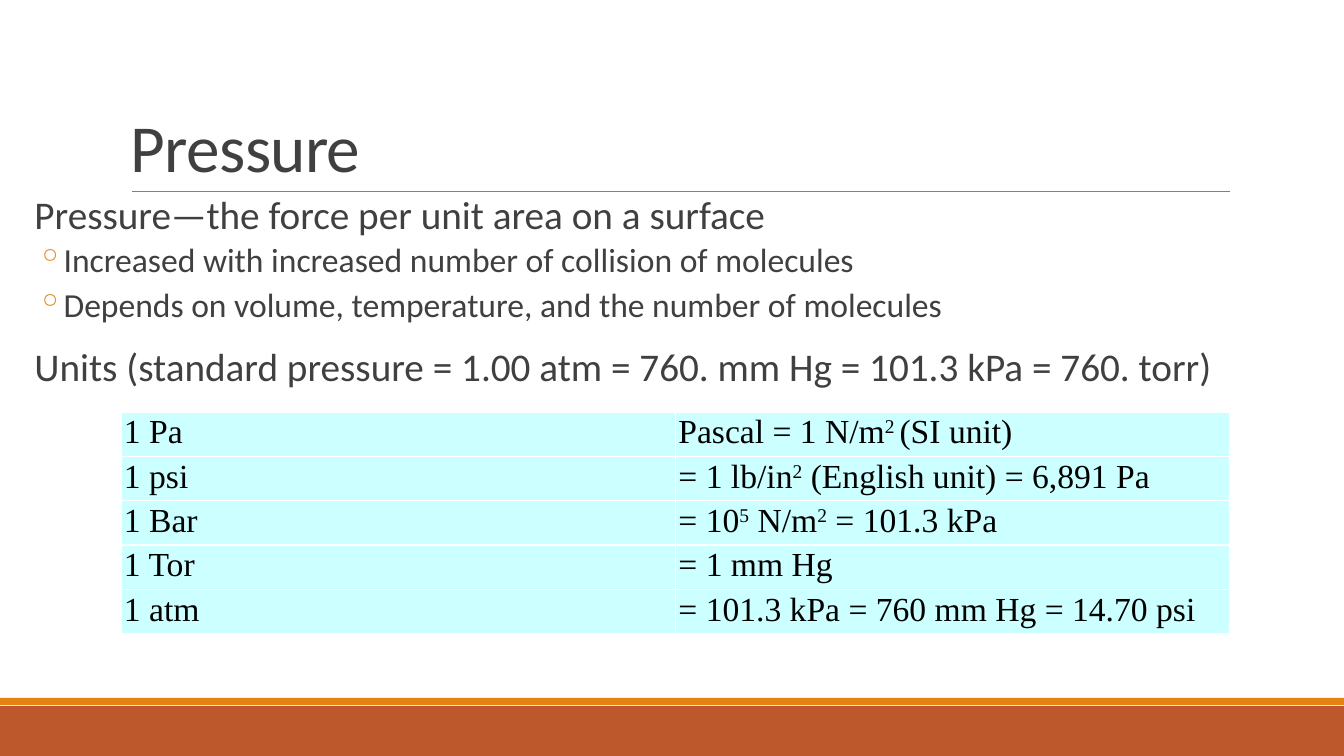
from lxml import etree
from pptx import Presentation
from pptx import util as u
from pptx.dml.color import RGBColor
from pptx.enum import shapes, text
from pptx.oxml.ns import qn

PX = 914400 / 100.8
COLOURS = {
    "band": "BD582C",
    "accent": "E48312",
    "rule": "808080",
    "text": "404040",
    "cell": "CCFFFF",
    "cell_text": "000000",
}


def px(length):
    return u.Emu(round(length * PX))


def colour(name):
    return RGBColor.from_string(COLOURS[name])


class SlideBuilder:
    def __init__(self, slide, font="Calibri", table_font="Times New Roman"):
        self.slide = slide
        self.font = font
        self.table_font = table_font

    def style(self, paragraph, size, font, tint):
        paragraph.font.size = u.Pt(size)
        paragraph.font.name = font
        paragraph.font.color.rgb = colour(tint)

    def band(self, top, height, fill):
        shape = self.slide.shapes.add_shape(
            shapes.MSO_SHAPE.RECTANGLE, 0, px(top), px(1344), px(height))
        shape.shadow.inherit = False
        shape.fill.solid()
        shape.fill.fore_color.rgb = colour(fill)
        shape.line.fill.background()

    def rule(self, left, right, y):
        line = self.slide.shapes.add_connector(
            shapes.MSO_CONNECTOR.STRAIGHT, px(left), px(y), px(right), px(y))
        line.line.color.rgb = colour("rule")
        line.line.width = u.Pt(0.5)
        etree.SubElement(line._element.spPr, qn("a:effectLst"))

    def text_frame(self, left, top, width, height):
        box = self.slide.shapes.add_textbox(px(left), px(top), px(width), px(height))
        box.text_frame.word_wrap = True
        return box.text_frame

    def title(self, wording, *place):
        frame = self.text_frame(*place)
        frame.vertical_anchor = text.MSO_ANCHOR.BOTTOM
        paragraph = frame.paragraphs[0]
        paragraph.line_spacing = 0.85
        self.style(paragraph, 48, self.font, "text")
        run = paragraph.add_run()
        run.text = wording
        run._r.get_or_add_rPr().set("spc", "-50")

    def outline(self, items, *place):
        frame = self.text_frame(*place)
        frame.margin_left = frame.margin_right = 0
        for index, (level, wording) in enumerate(items):
            paragraph = frame.add_paragraph() if index else frame.paragraphs[0]
            paragraph.text = wording
            paragraph.level = level
            paragraph.line_spacing = 0.9
            paragraph.space_before = u.Pt(2 if level else 12)
            paragraph.space_after = u.Pt(4 if level else 2)
            self.style(paragraph, 24 if level else 28, self.font, "text")
            if level:
                self.bullet(paragraph, "◦", 42, 20)
            else:
                self.bullet(paragraph, " ", 10, 10)

    def bullet(self, paragraph, mark, margin, hanging):
        properties = paragraph._p.get_or_add_pPr()
        properties.set("marL", str(px(margin)))
        properties.set("indent", str(-px(hanging)))
        tint = etree.Element(qn("a:buClr"))
        etree.SubElement(tint, qn("a:srgbClr"), val=COLOURS["accent"])
        character = etree.Element(qn("a:buChar"), char=mark)
        # Bullets must come before the default run properties
        default_font = properties.find(qn("a:defRPr"))
        default_font.addprevious(tint)
        default_font.addprevious(character)

    def table(self, rows, *place):
        table = self.slide.shapes.add_table(
            len(rows), len(rows[0]), *map(px, place)).table
        table.first_row = table.horz_banding = False
        for row_index, row in enumerate(rows):
            for column_index, wording in enumerate(row):
                self.cell(table.cell(row_index, column_index), wording)

    def cell(self, cell, wording):
        cell.fill.solid()
        cell.fill.fore_color.rgb = colour("cell")
        cell.margin_left = cell.margin_right = px(3)
        cell.margin_top = cell.margin_bottom = px(2)
        paragraph = cell.text_frame.paragraphs[0]
        self.style(paragraph, 24, self.table_font, "cell_text")
        # Every second part between carets is superscript
        for index, part in enumerate(wording.split("^")):
            run = paragraph.add_run()
            run.text = part
            if index % 2:
                run._r.get_or_add_rPr().set("baseline", "30000")


def main():
    presentation = Presentation()
    presentation.slide_width, presentation.slide_height = px(1344), px(756)
    builder = SlideBuilder(
        presentation.slides.add_slide(presentation.slide_layouts[6]))

    # Footer bands and title rule
    builder.band(706, 50, "band")
    builder.band(698, 7, "accent")
    builder.rule(132, 1230, 191)

    # Title and outline
    builder.title("Pressure", 121, 31, 1109, 160)
    builder.outline([
        (0, "Pressure—the force per unit area on a surface"),
        (1, "Increased with increased number of collision of molecules"),
        (1, "Depends on volume, temperature, and the number of molecules"),
        (0, "Units (standard pressure = 1.00 atm = 760. mm Hg = 101.3 kPa = 760. torr)"),
    ], 15, 191, 1215, 444)

    # Unit definitions
    builder.table([
        ("1 Pa", "Pascal = 1 N/m^2 ^(SI unit)"),
        ("1 psi", "= 1 lb/in^2^ (English unit) = 6,891 Pa"),
        ("1 Bar", "= 10^5^ N/m^2^ = 101.3 kPa"),
        ("1 Tor", "= 1 mm Hg"),
        ("1 atm", "= 101.3 kPa = 760 mm Hg = 14.70 psi"),
    ], 121, 412, 1109, 217)

    presentation.save("out.pptx")


if __name__ == "__main__":
    main()
